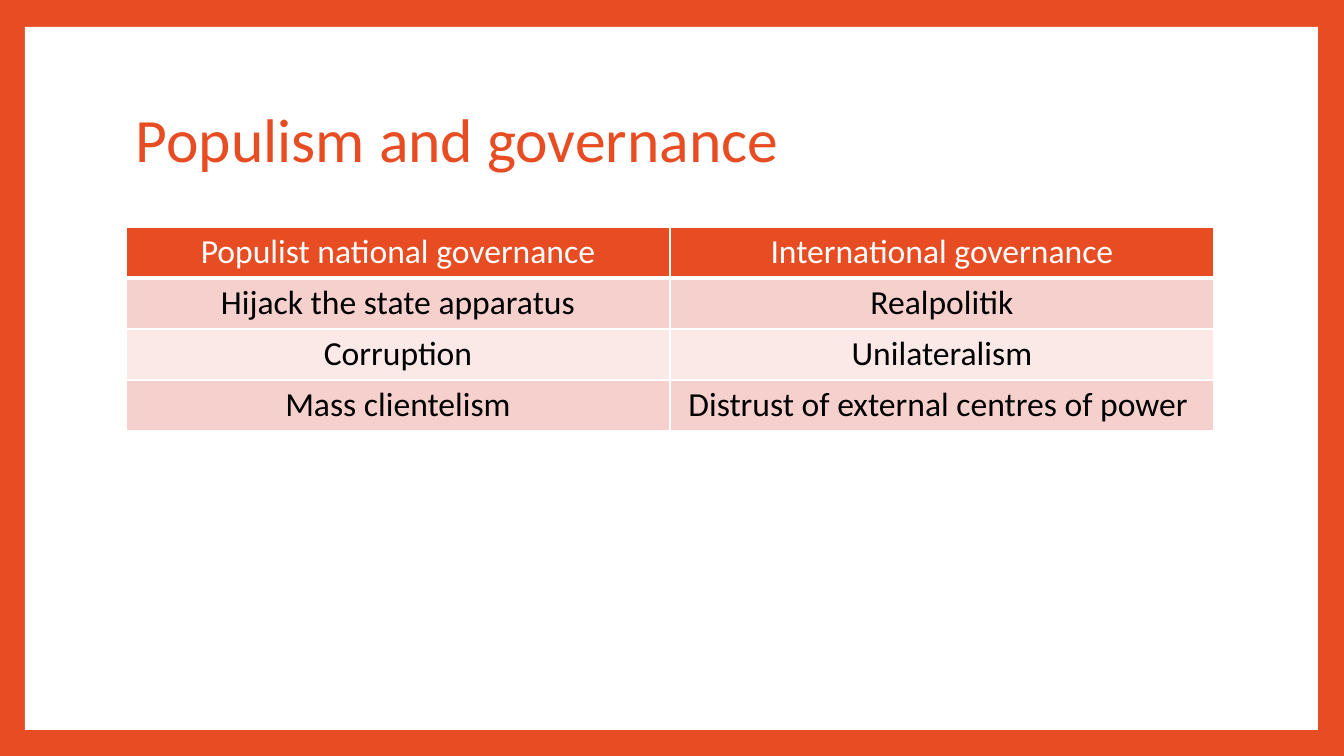
from lxml.etree import SubElement
from pptx import Presentation
from pptx.dml.color import RGBColor
from pptx.enum.shapes import MSO_SHAPE as Shape
from pptx.enum.text import MSO_ANCHOR as Anchor, PP_ALIGN as Align
from pptx.oxml import parse_xml
from pptx.oxml.ns import nsdecls, qn
from pptx.util import Emu, Pt

SCALE = 914400 / 100.8
FONT = "Calibri"
COLORS = {
    "accent": "E84C22",
    "white": "FFFFFF",
    "black": "000000",
    "band_dark": "F6D0CD",
    "band_light": "FBE9E8",
}
ROWS = [
    ("Populist national governance", "International governance"),
    ("Hijack the state apparatus", "Realpolitik"),
    ("Corruption", "Unilateralism"),
    ("Mass clientelism", "Distrust of external centres of power "),
]


def px(length):
    return Emu(round(length * SCALE))


def color(name):
    return RGBColor.from_string(COLORS[name])


def paint(fill, name):
    fill.solid()
    fill.fore_color.rgb = color(name)


def write(text_frame, text, *, size, ink, align=Align.LEFT, spacing=1.0):
    paragraph = text_frame.paragraphs[0]
    paragraph.alignment = align
    paragraph.line_spacing = spacing
    run = paragraph.add_run()
    run.text = text
    run.font.name = FONT
    run.font.size = Pt(size)
    run.font.color.rgb = color(ink)


def add_panel(slide, left, top, width, height):
    panel = slide.shapes.add_shape(
        Shape.RECTANGLE, px(left), px(top), px(width), px(height))
    panel.shadow.inherit = False
    paint(panel.fill, "white")
    panel.line.fill.background()


def add_title(slide, text, left, top, width, height):
    box = slide.shapes.add_textbox(px(left), px(top), px(width), px(height))
    box.text_frame.word_wrap = True
    box.text_frame.vertical_anchor = Anchor.MIDDLE
    write(box.text_frame, text, size=44, ink="accent", spacing=0.9)


def set_borders(cell, **widths):
    properties = cell._tc.get_or_add_tcPr()
    for index, (side, width) in enumerate(widths.items()):
        border = parse_xml(f'<a:ln{side} {nsdecls("a")} w="{Pt(width)}"/>')
        fill = SubElement(border, qn("a:solidFill"))
        SubElement(fill, qn("a:srgbClr"), val=COLORS["white"])
        properties.insert(index, border)


def add_grid(slide, rows, left, top, width, row_height):
    frame = slide.shapes.add_table(
        len(rows), len(rows[0]), px(left), px(top),
        px(width), px(row_height * len(rows)))
    table = frame.table
    for row_index, texts in enumerate(rows):
        is_header = row_index == 0
        band = "band_dark" if row_index % 2 else "band_light"
        for column_index, text in enumerate(texts):
            cell = table.cell(row_index, column_index)
            paint(cell.fill, "accent" if is_header else band)
            # The rule under the header is heavier than the others
            set_borders(cell, L=1, R=1, T=3 if row_index == 1 else 1,
                        B=3 if is_header else 1)
            write(cell.text_frame, text, size=24, align=Align.CENTER,
                  ink="white" if is_header else "black")


def main():
    presentation = Presentation()
    presentation.slide_width, presentation.slide_height = px(1344), px(756)
    slide = presentation.slides.add_slide(presentation.slide_layouts[6])

    # Coloured frame around a white panel
    paint(slide.background.fill, "accent")
    add_panel(slide, 25, 27, 1293, 703)

    # Title and comparison table
    add_title(slide, "Populism and governance", 126, 68, 1089, 149)
    add_grid(slide, ROWS, 126, 227, 1088, 51)

    presentation.save("out.pptx")


if __name__ == "__main__":
    main()
